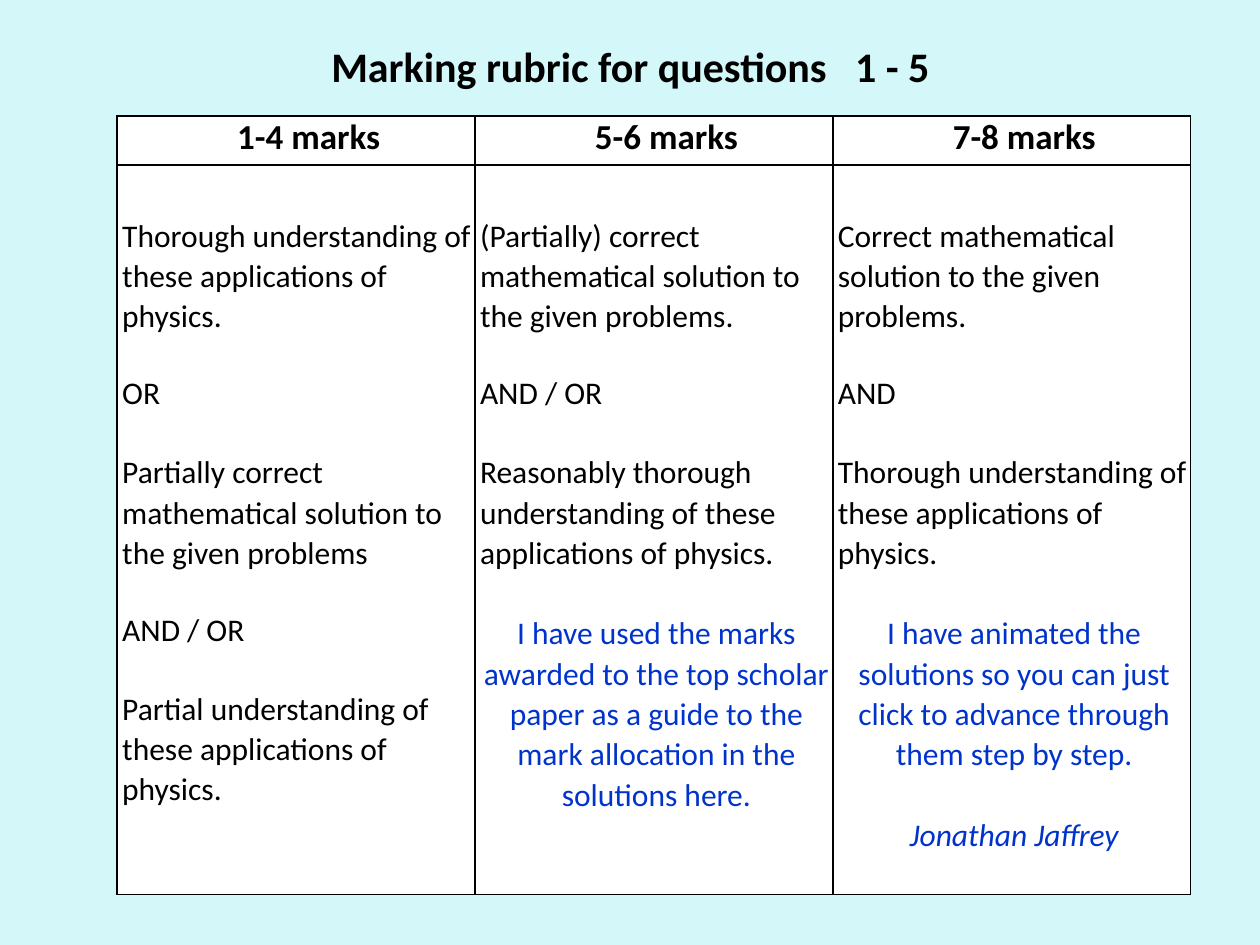
from lxml.etree import SubElement
from pptx import Presentation
from pptx.dml.color import RGBColor
from pptx.enum.text import MSO_ANCHOR, MSO_AUTO_SIZE, PP_ALIGN
from pptx.oxml.ns import qn
from pptx.util import Inches, Pt

BLACK, BLUE, WHITE, PALE = "000000", "0033CC", "FFFFFF", "D4F8FA"
GAP = 22
HEADERS = ["1-4 marks", "5-6 marks", "7-8 marks"]
CRITERIA = [
    ["Thorough understanding of these applications of physics.",
     "OR",
     "Partially correct mathematical solution to the given problems",
     "AND / OR",
     "Partial understanding of these applications of physics."],
    ["(Partially) correct mathematical solution to the given problems.",
     "AND / OR",
     "Reasonably thorough understanding of these applications of physics."],
    ["Correct mathematical solution to the given problems.",
     "AND",
     "Thorough understanding of these applications of physics."],
]
COMMENTS = [
    [],
    ["I have used the marks awarded to the top scholar paper as a guide "
     "to the mark allocation in the solutions here."],
    ["I have animated the solutions so you can just click to advance "
     "through them step by step."],
]
AUTHOR = "Jonathan Jaffrey"


def rgb(color):
    return RGBColor.from_string(color)


def style_run(p, size, color=BLACK, bold=False, italic=False):
    font = p.runs[0].font
    font.name, font.size = "Calibri", Pt(size)
    font.bold, font.italic = bold, italic
    font.color.rgb = rgb(color)


def indent(p, inches):
    p._p.get_or_add_pPr().set("marL", str(Inches(inches)))


def add_borders(cell):
    tcPr = cell._tc.get_or_add_tcPr()
    for i, side in enumerate(("lnL", "lnR", "lnT", "lnB")):
        ln = SubElement(tcPr, qn(f"a:{side}"), w=str(Pt(1)))
        fill = SubElement(ln, qn("a:solidFill"))
        SubElement(fill, qn("a:srgbClr"), val=BLACK)
        tcPr.remove(ln)
        tcPr.insert(i, ln)


def format_cell(cell, top=0):
    cell.fill.solid()
    cell.fill.fore_color.rgb = rgb(WHITE)
    cell.margin_left = cell.margin_right = cell.margin_bottom = 0
    cell.margin_top = Inches(top)
    add_borders(cell)


def fill_header(cell, text):
    format_cell(cell)
    cell.text_frame.text = text
    p = cell.text_frame.paragraphs[0]
    p.alignment = PP_ALIGN.CENTER
    indent(p, 0.2)
    style_run(p, 20, bold=True)


def fill_body(cell, criteria, comments, author=None):
    """Black criteria, then centred blue comments and an italic author."""
    format_cell(cell, top=0.4)
    tf = cell.text_frame
    items = criteria + comments + ([author] if author else [])
    for i, text in enumerate(items):
        p = tf.paragraphs[0] if i == 0 else tf.add_paragraph()
        p.text = text
        indent(p, 0.04)
        is_comment = i >= len(criteria)
        if i:
            p.space_before = Pt(GAP + is_comment)
        if text not in ("OR", "AND", "AND / OR"):
            p.line_spacing = 1.05
        if is_comment:
            p.alignment = PP_ALIGN.CENTER
        style_run(p, 18, BLUE if is_comment else BLACK, italic=text == author)


def add_title(s, text):
    title = s.shapes.title
    title.left, title.top = Inches(2.51), Inches(0.27)
    title.width, title.height = Inches(4.99), Inches(0.5)
    tf = title.text_frame
    tf.text = text
    tf.auto_size = MSO_AUTO_SIZE.NONE
    tf.word_wrap = False
    tf.vertical_anchor = MSO_ANCHOR.MIDDLE
    p = tf.paragraphs[0]
    p.alignment = PP_ALIGN.CENTER
    style_run(p, 24, bold=True)


def add_rubric(s):
    heights = [0.39, 5.79]
    frame = s.shapes.add_table(2, len(HEADERS), Inches(0.93), Inches(0.92),
                               Inches(8.52), Inches(sum(heights)))
    table = frame.table
    for row, height in zip(table.rows, heights):
        row.height = Inches(height)
    for col, header in enumerate(HEADERS):
        fill_header(table.cell(0, col), header)
        author = AUTHOR if col == len(HEADERS) - 1 else None
        fill_body(table.cell(1, col), CRITERIA[col], COMMENTS[col], author)


def main():
    prs = Presentation()
    prs.slide_width, prs.slide_height = Inches(10), Inches(7.5)
    s = prs.slides.add_slide(prs.slide_layouts[5])
    s.background.fill.solid()
    s.background.fill.fore_color.rgb = rgb(PALE)
    add_title(s, "Marking rubric for questions   1 - 5")
    add_rubric(s)
    prs.save("out.pptx")


if __name__ == "__main__":
    main()
